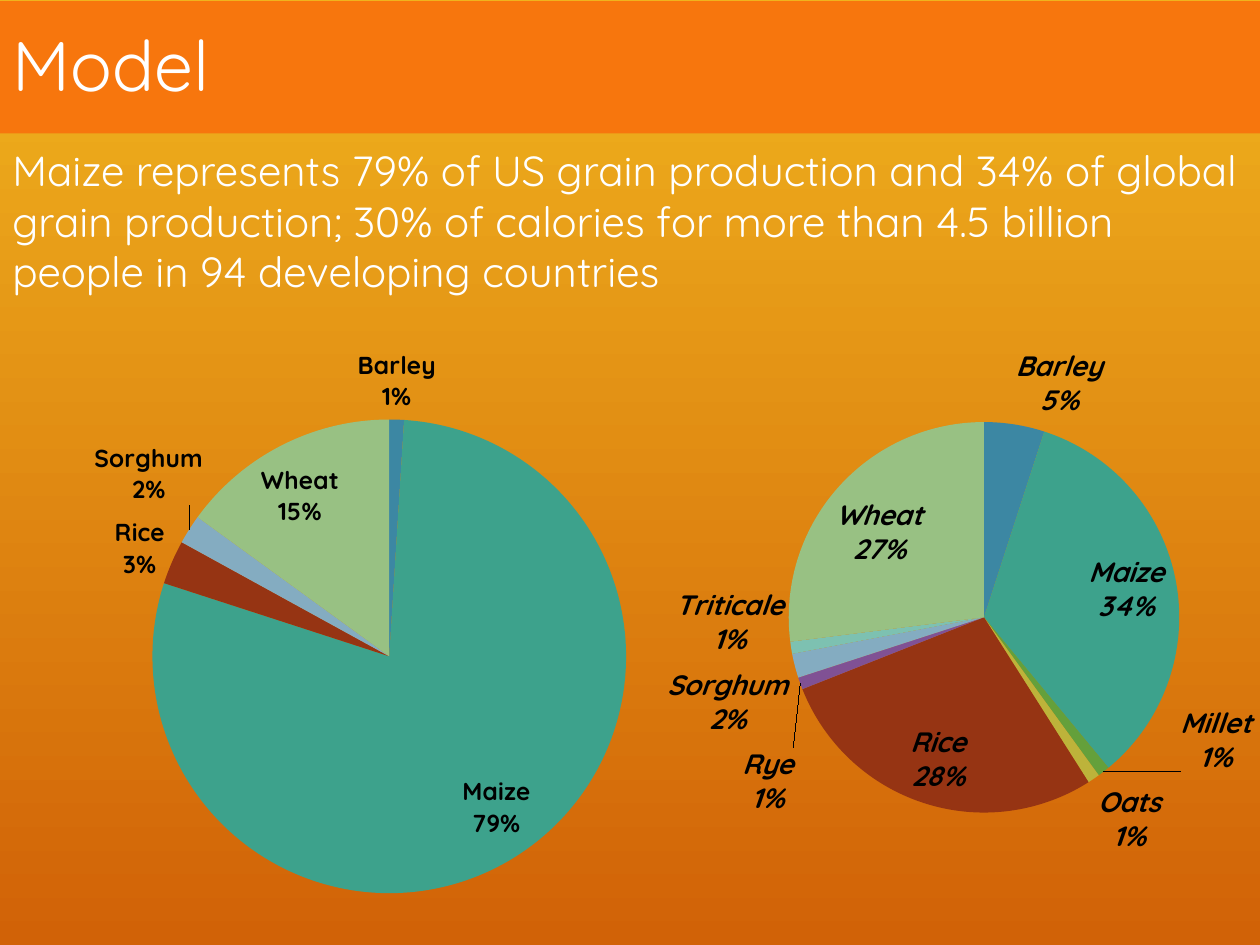
import pptx
import pptx.chart.data
import pptx.dml.color
import pptx.enum.chart
import pptx.enum.text
import pptx.oxml
import pptx.oxml.ns
import pptx.util
from pptx.util import Inches

RGBColor = pptx.dml.color.RGBColor
FONT = "Quicksand"
WHITE = RGBColor(0xFF, 0xFF, 0xFF)
BLACK = RGBColor(0x00, 0x00, 0x00)
TITLE_FILL = RGBColor(0xF7, 0x76, 0x0D)
BACKGROUND = [RGBColor(0xF0, 0xB3, 0x1E), RGBColor(0xD1, 0x62, 0x07)]
SLICE_COLORS = [
    RGBColor(0x3C, 0x87, 0xA3),  # Barley
    RGBColor(0x3D, 0xA2, 0x8C),  # Maize
    RGBColor(0x64, 0xA0, 0x3B),  # Millet
    RGBColor(0xBD, 0xB3, 0x3A),  # Oats
    RGBColor(0x96, 0x34, 0x13),  # Rice
    RGBColor(0x80, 0x51, 0x94),  # Rye
    RGBColor(0x84, 0xAC, 0xC1),  # Sorghum
    RGBColor(0x7D, 0xC1, 0xB1),  # Triticale
    RGBColor(0x98, 0xC1, 0x83),  # Wheat
]

TITLE = "Model"
SUMMARY = (
    "Maize represents 79% of US grain production and 34% of global grain "
    "production; 30% of calories for more than 4.5 billion people in 94 "
    "developing countries"
)
# box: left, top, width, height; pie: center x, center y, radius (inches on slide)
CHARTS = [
    {
        "grains": ["Barley", "Maize", "Millet", "Oats", "Rice", "Rye",
                   "Sorghum", "Triticale", "Wheat"],
        "shares": [5, 34, 1, 1, 28, 1, 2, 1, 27],
        "box": (4.83, 2.63, 5.17, 4.42), "pie": (7.81, 4.9, 1.55),
        "size": 16, "italic": True,
    },
    {
        "grains": ["Barley", "Maize", "Millet", "Oats", "Rice", "Rye",
                   "Sorghum", "", "Wheat"],
        "shares": [1, 79, 0, 0, 3, 0, 2, None, 15],
        "box": (0, 2.63, 5.42, 4.6), "pie": (3.09, 5.21, 1.88),
        "size": 14, "italic": False,
    },
]


def format_text(paragraph, size):
    paragraph.alignment = pptx.enum.text.PP_ALIGN.LEFT
    paragraph.font.name = FONT
    paragraph.font.size = pptx.util.Pt(size)
    paragraph.font.color.rgb = WHITE


def place_pie(chart, box, pie):
    """Fix the plot area so the pie gets the given center and radius."""
    left, top, width, height = box
    center_x, center_y, radius = pie
    fractions = {
        "x": (center_x - radius - left) / width,
        "y": (center_y - radius - top) / height,
        "w": 2 * radius / width,
        "h": 2 * radius / height,
    }
    modes = "".join(f'<c:{axis}Mode val="edge"/>' for axis in "xy")
    values = "".join(f'<c:{key} val="{value:.4f}"/>' for key, value in fractions.items())
    layout = pptx.oxml.parse_xml(
        f'<c:layout {pptx.oxml.ns.nsdecls("c")}><c:manualLayout>'
        f'<c:layoutTarget val="inner"/>{modes}{values}</c:manualLayout></c:layout>'
    )
    plot_area = chart.plots[0]._element.getparent()
    for old_layout in plot_area.findall(pptx.oxml.ns.qn("c:layout")):
        plot_area.remove(old_layout)
    plot_area.insert(0, layout)


def label_slices(series, size, italic):
    labels = series.data_labels
    labels.show_value = False
    labels.show_category_name = True
    labels.show_percentage = True
    labels.number_format = "0%"
    labels.number_format_is_linked = False
    labels.position = pptx.enum.chart.XL_LABEL_POSITION.BEST_FIT
    labels.font.name = FONT
    labels.font.size = pptx.util.Pt(size)
    labels.font.bold = True
    labels.font.italic = italic
    labels.font.color.rgb = BLACK
    separator = pptx.oxml.parse_xml(
        f'<c:separator {pptx.oxml.ns.nsdecls("c")}>\n</c:separator>'
    )
    labels._element.find(pptx.oxml.ns.qn("c:showBubbleSize")).addnext(separator)


def add_pie(slide, grains, shares, box, pie, size, italic):
    chart_data = pptx.chart.data.CategoryChartData()
    chart_data.categories = grains
    chart_data.add_series("Series 1", shares)
    chart = slide.shapes.add_chart(
        pptx.enum.chart.XL_CHART_TYPE.PIE, *map(Inches, box), chart_data
    ).chart
    chart.has_title = False
    chart.has_legend = False
    chart.font.name = FONT
    chart.font.size = pptx.util.Pt(size)
    chart.font.bold = True
    chart.plots[0].vary_by_categories = True
    series = chart.plots[0].series[0]
    for index, color in enumerate(SLICE_COLORS):
        slice_format = series.points[index].format
        slice_format.fill.solid()
        slice_format.fill.fore_color.rgb = color
        slice_format.line.fill.background()
    label_slices(series, size, italic)
    place_pie(chart, box, pie)


def main():
    presentation = pptx.Presentation()
    presentation.slide_width = Inches(10)
    presentation.slide_height = Inches(7.5)
    slide = presentation.slides.add_slide(presentation.slide_layouts[5])

    background = slide.background.fill
    background.gradient()
    background.gradient_angle = 270
    for stop, position, color in zip(background.gradient_stops, (0, 1), BACKGROUND):
        stop.position = position
        stop.color.rgb = color

    title = slide.shapes.title
    title.left, title.top, title.width, title.height = map(Inches, (0, 0.01, 10, 1.05))
    title.fill.solid()
    title.fill.fore_color.rgb = TITLE_FILL
    title.text_frame.text = TITLE
    title.text_frame.vertical_anchor = pptx.enum.text.MSO_ANCHOR.MIDDLE
    title.text_frame.paragraphs[0].line_spacing = 0.95
    format_text(title.text_frame.paragraphs[0], 40)

    for chart in CHARTS:
        add_pie(slide, **chart)

    summary = slide.shapes.add_textbox(*map(Inches, (0, 1.1, 10, 1.31))).text_frame
    summary.word_wrap = True
    summary.auto_size = pptx.enum.text.MSO_AUTO_SIZE.SHAPE_TO_FIT_TEXT
    summary.text = SUMMARY
    format_text(summary.paragraphs[0], 24)

    presentation.save("out.pptx")


if __name__ == "__main__":
    main()
